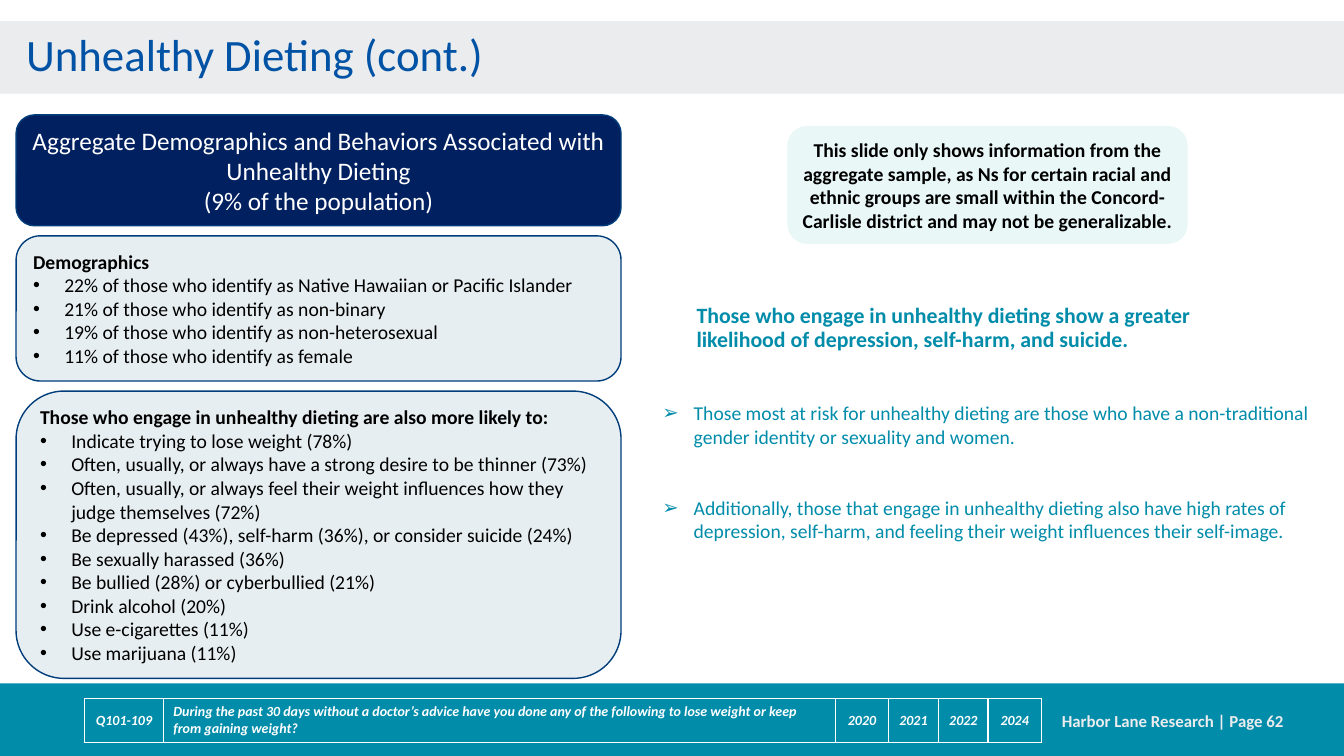
from pptx import Presentation
from pptx.dml.color import RGBColor
from pptx.enum.shapes import MSO_SHAPE as Shape
from pptx.enum.text import MSO_ANCHOR as Anchor, MSO_AUTO_SIZE as AutoSize, PP_ALIGN as Align
from pptx.oxml.ns import qn
from pptx.util import Inches, Pt
from lxml import etree

COLORS = {
    "white": "FFFFFF", "black": "000000", "band": "EBECEE", "teal": "018CAA",
    "title": "0052A5", "navy": "002060", "outline": "003D7A",
    "panel": "E7EEF1", "note": "E9F7F6",
}
FONT = "Calibri"

HEADING = ["Aggregate Demographics and Behaviors Associated with Unhealthy Dieting",
           "(9% of the population)"]
DEMOGRAPHICS = [
    "Demographics",
    "22% of those who identify as Native Hawaiian or Pacific Islander",
    "21% of those who identify as non-binary",
    "19% of those who identify as non-heterosexual",
    "11% of those who identify as female",
]
BEHAVIORS = [
    "Those who engage in unhealthy dieting are also more likely to:",
    "Indicate trying to lose weight (78%)",
    "Often, usually, or always have a strong desire to be thinner (73%)",
    "Often, usually, or always feel their weight influences how they judge themselves (72%)",
    "Be depressed (43%), self-harm (36%), or consider suicide (24%)",
    "Be sexually harassed (36%)",
    "Be bullied (28%) or cyberbullied (21%)",
    "Drink alcohol (20%)",
    "Use e-cigarettes (11%)",
    "Use marijuana (11%)",
]
NOTE = ("This slide only shows information from the aggregate sample, as Ns for certain racial "
        "and ethnic groups are small within the Concord-Carlisle district and may not be "
        "generalizable.")
SUMMARY = ("Those who engage in unhealthy dieting show a greater likelihood of depression, "
           "self-harm, and suicide.")
FINDINGS = [
    "Those most at risk for unhealthy dieting are those who have a non-traditional gender "
    "identity or sexuality and women.",
    "Additionally, those that engage in unhealthy dieting also have high rates of depression, "
    "self-harm, and feeling their weight influences their self-image.",
]
QUESTION = ["Q101-109",
            "During the past 30 days without a doctor’s advice have you done any of the following "
            "to lose weight or keep from gaining weight?",
            "2020", "2021", "2022", "2024"]
QUESTION_WIDTHS = [0.78, 6.67, 0.52, 0.5, 0.49, 0.53]


def color(name):
    return RGBColor.from_string(COLORS[name])


def inches(box):
    return [Inches(value) for value in box]


def place(shape, box):
    shape.left, shape.top, shape.width, shape.height = inches(box)


def add_bullet(paragraph, character):
    properties = paragraph._p.get_or_add_pPr()
    properties.set("marL", str(Inches(0.31)))
    properties.set("indent", str(-Inches(0.31)))
    font = etree.SubElement(properties, qn("a:buFont"))
    font.set("typeface", "Arial")
    etree.SubElement(properties, qn("a:buChar")).set("char", character)


def write(frame, lines, size, ink, bold=False, italic=False, align=Align.LEFT,
          anchor=Anchor.MIDDLE, bullet=None, first_bullet=0, spacing=None, gap=0):
    """Fill a text frame, one paragraph per line, bulleted from first_bullet on."""
    frame.word_wrap = True
    frame.auto_size = AutoSize.NONE
    frame.vertical_anchor = anchor
    for index, line in enumerate(lines):
        paragraph = frame.paragraphs[0] if index == 0 else frame.add_paragraph()
        paragraph.text = line
        paragraph.alignment = align
        paragraph.space_before = Pt(gap if index else 0)
        if spacing:
            paragraph.line_spacing = spacing
        if bullet and index >= first_bullet:
            add_bullet(paragraph, bullet)
        font = paragraph.font
        font.name, font.size, font.bold, font.italic = FONT, Pt(size), bold, italic
        font.color.rgb = color(ink)


def add_box(slide, kind, box, fill, outline=None):
    shape = slide.shapes.add_shape(kind, *inches(box))
    shape.shadow.inherit = False
    shape.fill.solid()
    shape.fill.fore_color.rgb = color(fill)
    if outline:
        shape.line.color.rgb = color(outline)
        shape.line.width = Pt(1)
    else:
        shape.line.fill.background()
    return shape


def add_bands(slide):
    """Header and footer bands, behind everything else."""
    for top, fill in ((0.21, "band"), (6.78, "teal")):
        band = add_box(slide, Shape.RECTANGLE, (0, top, 13.33, 0.72), fill)
        slide.shapes._spTree.insert(2, band._element)


def add_title(slide, box):
    title = slide.shapes.title
    place(title, box)
    write(title.text_frame, ["Unhealthy Dieting (cont.)"], 32, "title", spacing=0.9)


def add_panels(slide, left, top, width):
    """Heading panel with the two list panels stacked below it."""
    gap = 0.1
    panels = ((HEADING, 1.1, "navy"), (DEMOGRAPHICS, 1.44, "panel"), (BEHAVIORS, 2.85, "panel"))
    for lines, height, fill in panels:
        panel = add_box(slide, Shape.ROUNDED_RECTANGLE, (left, top, width, height), fill, "outline")
        if fill == "navy":
            write(panel.text_frame, lines, 18, "white", align=Align.CENTER)
        else:
            write(panel.text_frame, lines, 14, "black", bullet="•", first_bullet=1)
            panel.text_frame.paragraphs[0].font.bold = True
        top += height + gap


def add_findings(slide, left, top):
    """Note, summary and bulleted findings in the right-hand column."""
    note = add_box(slide, Shape.ROUNDED_RECTANGLE, (left + 1.34, top, 3.97, 1.17), "note")
    note.text_frame.margin_left = note.text_frame.margin_right = Inches(0.05)
    write(note.text_frame, [NOTE], 14, "black", bold=True, align=Align.CENTER)

    summary = slide.shapes.add_textbox(*inches((left + 0.34, top + 1.68, 5.82, 0.66)))
    write(summary.text_frame, [SUMMARY], 15.6, "teal", bold=True, spacing=0.9)

    findings = slide.placeholders[1]
    place(findings, (left, top + 2.68, 6.86, 1.51))
    write(findings.text_frame, FINDINGS, 14, "teal", anchor=Anchor.TOP, bullet="➢", gap=34)


def add_cell_borders(cell):
    properties = cell._tc.get_or_add_tcPr()
    for index, side in enumerate(("a:lnL", "a:lnR", "a:lnT", "a:lnB")):
        line = etree.Element(qn(side), w=str(Pt(1)))
        fill = etree.SubElement(line, qn("a:solidFill"))
        etree.SubElement(fill, qn("a:srgbClr")).set("val", COLORS["white"])
        properties.insert(index, line)


def add_footer(slide, left, top):
    """Survey question table and page label on the footer band."""
    box = (left, top, sum(QUESTION_WIDTHS), 0.43)
    table = slide.shapes.add_table(1, len(QUESTION), *inches(box)).table
    table.first_row = table.horz_banding = False
    for index, (text, width) in enumerate(zip(QUESTION, QUESTION_WIDTHS)):
        table.columns[index].width = Inches(width)
        cell = table.cell(0, index)
        cell.fill.background()
        cell.vertical_anchor = Anchor.MIDDLE
        add_cell_borders(cell)
        paragraph = cell.text_frame.paragraphs[0]
        paragraph.text = text
        paragraph.alignment = Align.LEFT if index == 1 else Align.CENTER
        font = paragraph.font
        font.name, font.size, font.bold, font.italic = FONT, Pt(10), True, True
        font.color.rgb = color("white")

    label = slide.shapes.add_textbox(*inches((left + 9.37, top + 0.02, 2.62, 0.4)))
    write(label.text_frame, ["Harbor Lane Research | Page 62"], 12, "band", bold=True,
          align=Align.RIGHT)


def main():
    presentation = Presentation()
    presentation.slide_width, presentation.slide_height = Inches(13.33), Inches(7.5)
    slide = presentation.slides.add_slide(presentation.slide_layouts[1])
    add_bands(slide)
    add_title(slide, (0.16, 0.24, 12.98, 0.66))
    add_panels(slide, 0.16, 1.14, 6)
    add_findings(slide, 6.47, 1.25)
    add_footer(slide, 0.84, 6.93)
    presentation.save("out.pptx")


if __name__ == "__main__":
    main()
